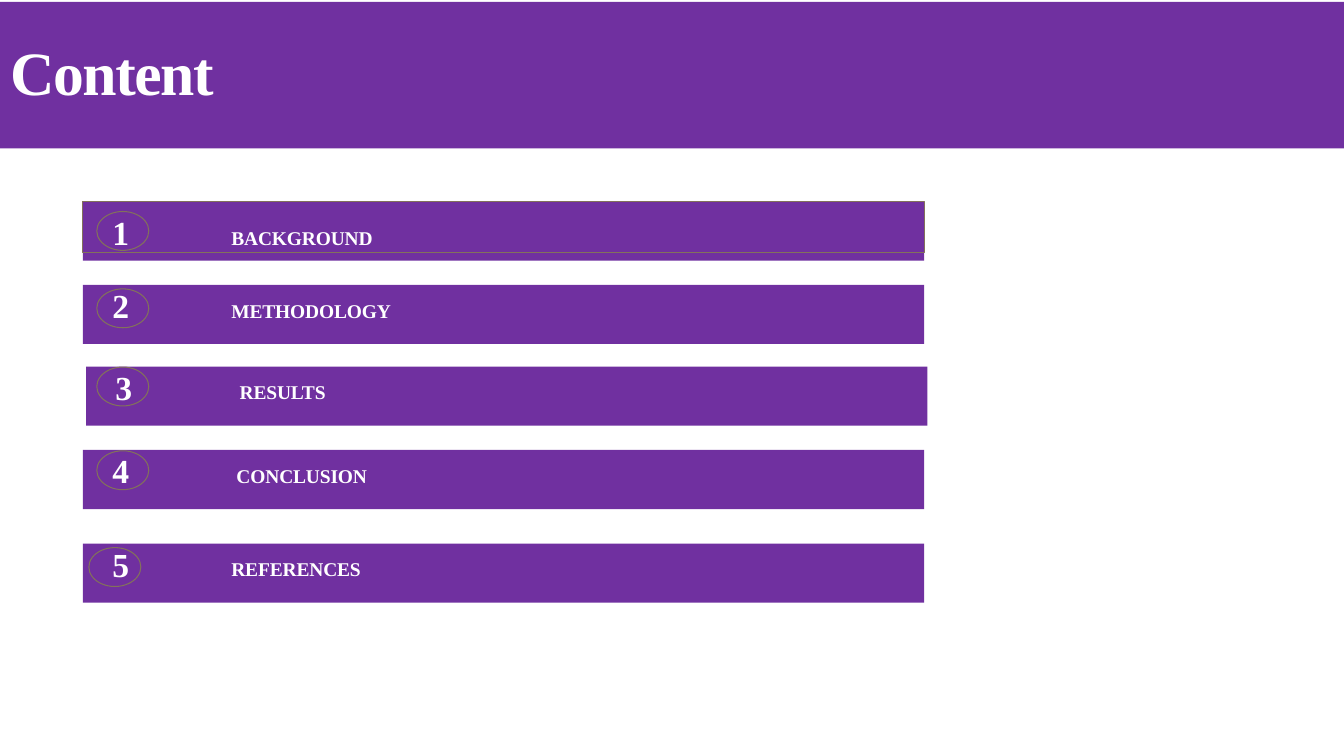
from dataclasses import dataclass

from lxml import etree
from pptx import Presentation
from pptx import util as u
from pptx.dml.color import RGBColor
from pptx.enum import shapes, text
from pptx.oxml.ns import qn

PURPLE = "7030A0"
OLIVE = "83715B"
WHITE = "FFFFFF"
BAR_LEFT = 2.09
BAR_WIDTH = 21.2
BAR_HEIGHT = 1.49
RING_LEFT = 2.44
NUMBER_INDENT = 0.74
LABEL_TAB = 3.0


@dataclass
class Entry:
    label: str
    top: float
    ring_top: float
    bar_shift: float = 0
    ring_shift: float = 0
    label_shift: float = 0
    framed: bool = False


ENTRIES = [
    Entry("BACKGROUND", 5.08, 5.33, framed=True),
    Entry("METHODOLOGY", 7.18, 7.28),
    Entry("RESULTS", 9.24, 9.25, bar_shift=0.08, label_shift=0.13),
    Entry("CONCLUSION", 11.34, 11.36, label_shift=0.13),
    Entry("REFERENCES", 13.7, 13.8, ring_shift=-0.2),
]


def color(value: str) -> RGBColor:
    return RGBColor.from_string(value)


def fill_with(shape, value: str) -> None:
    shape.fill.solid()
    shape.fill.fore_color.rgb = color(value)


def format_paragraph(paragraph, size: float, spacing: int) -> None:
    paragraph.alignment = text.PP_ALIGN.LEFT
    font = paragraph.font
    font.name = "Times New Roman"
    font.size = u.Pt(size)
    font.bold = True
    font.color.rgb = color(WHITE)
    for run in paragraph.runs:
        run._r.get_or_add_rPr().set("spc", str(spacing))


def add_bar(slide, left: float, top: float):
    bar = slide.shapes.add_shape(
        shapes.MSO_SHAPE.RECTANGLE, u.Cm(left), u.Cm(top), u.Cm(BAR_WIDTH), u.Cm(BAR_HEIGHT)
    )
    bar.shadow.inherit = False
    fill_with(bar, PURPLE)
    bar.line.fill.background()
    return bar


def add_frame(slide, left: float, top: float):
    frame = slide.shapes.add_textbox(u.Cm(left), u.Cm(top), u.Cm(BAR_WIDTH), u.Cm(1.28))
    frame.line.color.rgb = color(OLIVE)
    frame.line.width = u.Pt(0.75)
    return frame


def add_ring(slide, left: float, top: float) -> None:
    ring = slide.shapes.add_shape(
        shapes.MSO_SHAPE.OVAL, u.Cm(left), u.Cm(top), u.Cm(1.31), u.Cm(0.98)
    )
    ring.shadow.inherit = False
    ring.fill.background()
    ring.line.color.rgb = color(OLIVE)
    ring.line.width = u.Pt(0.75)


def write_entry(shape, number: int, entry: Entry) -> None:
    frame = shape.text_frame
    frame.word_wrap = True
    frame.vertical_anchor = text.MSO_ANCHOR.TOP
    frame.margin_left = frame.margin_right = frame.margin_bottom = 0
    frame.margin_top = u.Cm(0.27 if entry.framed else 0)
    paragraph = frame.paragraphs[0]
    properties = paragraph._p.get_or_add_pPr()
    properties.set("marL", str(u.Cm(NUMBER_INDENT)))
    tabs = etree.SubElement(properties, qn("a:tabLst"))
    position = u.Cm(LABEL_TAB + entry.label_shift)
    etree.SubElement(tabs, qn("a:tab"), pos=str(position), algn="l")
    paragraph.add_run().text = f"{number}\t"
    label = paragraph.add_run()
    label.text = entry.label
    label._r.get_or_add_rPr().set("baseline", "1000")
    format_paragraph(paragraph, 24, -10)


def add_entry(slide, number: int, entry: Entry) -> None:
    left = BAR_LEFT + entry.bar_shift
    holder = add_bar(slide, left, entry.top)
    if entry.framed:
        holder = add_frame(slide, left, entry.top)
    write_entry(holder, number, entry)
    add_ring(slide, RING_LEFT + entry.ring_shift, entry.ring_top)


def format_title(title) -> None:
    title.left, title.top = u.Cm(0), u.Cm(0.05)
    title.width, title.height = u.Cm(33.87), u.Cm(3.69)
    fill_with(title, PURPLE)
    frame = title.text_frame
    frame.text = "Content"
    frame.auto_size = text.MSO_AUTO_SIZE.NONE
    frame.vertical_anchor = text.MSO_ANCHOR.MIDDLE
    paragraph = frame.paragraphs[0]
    paragraph.line_spacing = 0.9
    format_paragraph(paragraph, 44, -105)


def main() -> None:
    presentation = Presentation()
    presentation.slide_width = u.Cm(33.87)
    presentation.slide_height = u.Cm(19.05)
    slide = presentation.slides.add_slide(presentation.slide_layouts[5])
    format_title(slide.shapes.title)
    for number, entry in enumerate(ENTRIES, 1):
        add_entry(slide, number, entry)
    presentation.save("out.pptx")


if __name__ == "__main__":
    main()
